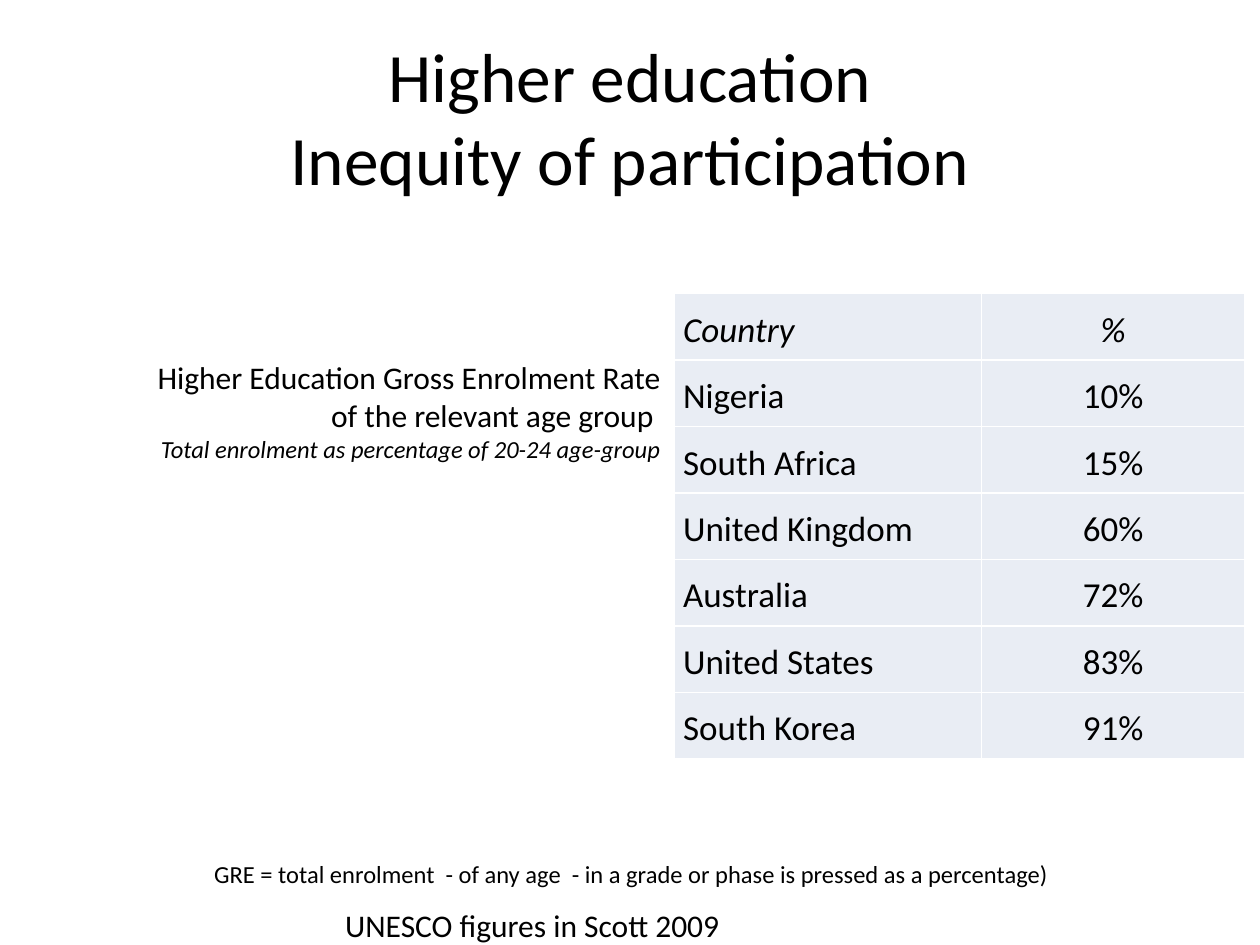
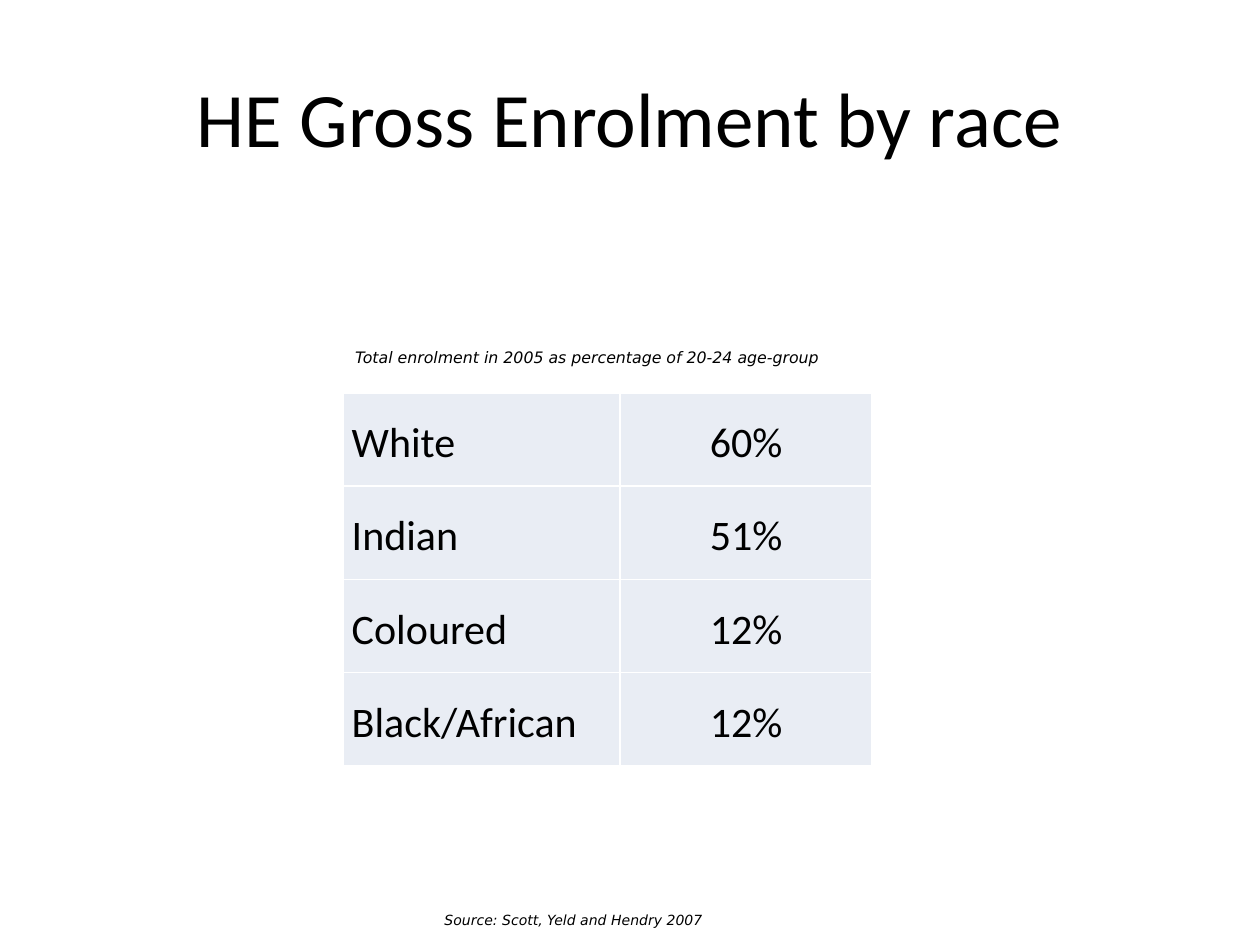
import pptx
import pptx.util
import pptx.dml.color
import pptx.enum.text
import pptx.oxml.ns
from lxml import etree
from dataclasses import dataclass

Cm, Pt = pptx.util.Cm, pptx.util.Pt
ALIGN = pptx.enum.text.PP_ALIGN
ANCHOR = pptx.enum.text.MSO_ANCHOR
FIT = pptx.enum.text.MSO_AUTO_SIZE


@dataclass(frozen=True)
class Theme:
    font: str = "Calibri"
    small_font: str = "DejaVu Sans"
    ink: str = "000000"
    cell: str = "E9EDF4"
    rule: str = "FFFFFF"
    long_title: float = 39.6
    title: float = 44
    big_cell: float = 24
    cell_text: float = 20
    body: float = 18
    note: float = 14
    caption: float = 9
    source: float = 8


THEME = Theme()

# Content: places are left, top, width, height in centimetres
TITLE_PLACE = (1.27, 0.76, 22.86, 3.18)
SMALL = {"name": THEME.small_font, "italic": True}

SLIDES = [
    {
        "title": ("Higher education\vInequity of participation", THEME.long_title),
        "table": {
            "corner": (13.59, 5.92), "columns": (6.2, 5.3), "row": 1.34,
            "size": THEME.cell_text, "italic_header": True,
            "rows": [("Country", "%"), ("Nigeria", "10%"), ("South Africa", "15%"),
                     ("United Kingdom", "60%"), ("Australia", "72%"),
                     ("United States", "83%"), ("South Korea", "91%")],
        },
        "boxes": [
            ((2.57, 7.09, 11, 2.39), ANCHOR.MIDDLE, ALIGN.RIGHT, [
                ("Higher Education Gross Enrolment Rate of the relevant age group ",
                 {"size": Pt(THEME.body)}),
                ("Total enrolment as percentage of 20-24 age-group",
                 {"size": Pt(THEME.note), "italic": True})]),
            ((0.03, 17.2, 25.4, 0.86), ANCHOR.TOP, ALIGN.CENTER, [
                (" GRE = total enrolment  - of any age  - in a grade or phase"
                 " is pressed as a percentage) ", {"size": Pt(THEME.note)})]),
            ((6.71, 18.14, 17.2, 1.02), ANCHOR.TOP, ALIGN.LEFT, [
                ("UNESCO figures in Scott 2009", {"size": Pt(THEME.body)})]),
        ],
    },
    {
        "title": ("HE Gross Enrolment by race", THEME.title),
        "table": {
            "corner": (6.91, 7.92), "columns": (5.59, 5.08), "row": 1.88,
            "size": THEME.big_cell, "italic_header": False,
            "rows": [("White", "60%"), ("Indian", "51%"),
                     ("Coloured", "12%"), ("Black/African", "12%")],
        },
        "boxes": [
            ((6.91, 6.88, 10.59, 0.64), ANCHOR.MIDDLE, ALIGN.LEFT, [
                ("Total enrolment in 2005 as percentage of 20-24 age-group",
                 {"size": Pt(THEME.caption), **SMALL})]),
            ((8.71, 18.24, 9.8, 0.61), ANCHOR.MIDDLE, ALIGN.LEFT, [
                ("Source: Scott, Yeld and Hendry 2007",
                 {"size": Pt(THEME.source), **SMALL})]),
        ],
    },
]


# Shared helpers
def apply(target, values):
    for name, value in values.items():
        setattr(target, name, value)


def color(code):
    return pptx.dml.color.RGBColor.from_string(code)


def write(para, text, font, layout):
    """Fill one paragraph and format its spans."""
    para.text = text
    apply(para, layout)
    for span in para.runs:
        apply(span.font, {"name": THEME.font, **font})
        span.font.color.rgb = color(THEME.ink)


def add_title(page, text, size):
    box = page.shapes.title
    apply(box, dict(zip(("left", "top", "width", "height"), map(Cm, TITLE_PLACE))))
    apply(box.text_frame, {"auto_size": FIT.NONE, "vertical_anchor": ANCHOR.MIDDLE})
    write(box.text_frame.paragraphs[0], text, {"size": Pt(size)},
          {"alignment": ALIGN.CENTER})


def add_box(page, place, anchor, align, lines):
    frame = page.shapes.add_textbox(*map(Cm, place)).text_frame
    apply(frame, {"word_wrap": True, "vertical_anchor": anchor,
                  "auto_size": FIT.SHAPE_TO_FIT_TEXT})
    for index, (text, font) in enumerate(lines):
        para = frame.add_paragraph() if index else frame.paragraphs[0]
        write(para, text, font, {"alignment": align})


def add_borders(cell):
    """Rule all four sides; the lines go before the fill."""
    properties = cell._tc.get_or_add_tcPr()
    qn = pptx.oxml.ns.qn
    for index, side in enumerate(("a:lnL", "a:lnR", "a:lnT", "a:lnB")):
        line = etree.Element(qn(side), w=str(Pt(1)))
        fill = etree.SubElement(line, qn("a:solidFill"))
        etree.SubElement(fill, qn("a:srgbClr"), val=THEME.rule)
        properties.insert(index, line)


def add_table(page, corner, columns, row, size, italic_header, rows):
    extent = (sum(columns), row * len(rows))
    table = page.shapes.add_table(len(rows), len(columns),
                                  *map(Cm, corner + extent)).table
    apply(table, {"first_row": False, "horz_banding": False})
    for column, width in zip(table.columns, columns):
        column.width = Cm(width)
    for row_index, values in enumerate(rows):
        table.rows[row_index].height = Cm(row)
        for column_index, text in enumerate(values):
            cell = table.cell(row_index, column_index)
            apply(cell, {"vertical_anchor": ANCHOR.MIDDLE,
                         "margin_left": Cm(0.18), "margin_right": Cm(0.18),
                         "margin_top": 0, "margin_bottom": 0})
            cell.fill.solid()
            cell.fill.fore_color.rgb = color(THEME.cell)
            add_borders(cell)
            write(cell.text_frame.paragraphs[0], text,
                  {"size": Pt(size), "italic": italic_header and row_index == 0},
                  {"alignment": ALIGN.CENTER if column_index else ALIGN.LEFT,
                   "line_spacing": 1.15, "space_after": Pt(6)})


# Build the deck
def main():
    deck = pptx.Presentation()
    apply(deck, {"slide_width": Cm(25.4), "slide_height": Cm(19.05)})
    title_only = deck.slide_layouts.get_by_name("Title Only")
    for content in SLIDES:
        page = deck.slides.add_slide(title_only)
        add_title(page, *content["title"])
        add_table(page, **content["table"])
        for box in content["boxes"]:
            add_box(page, *box)
    deck.save("out.pptx")


if __name__ == "__main__":
    main()
